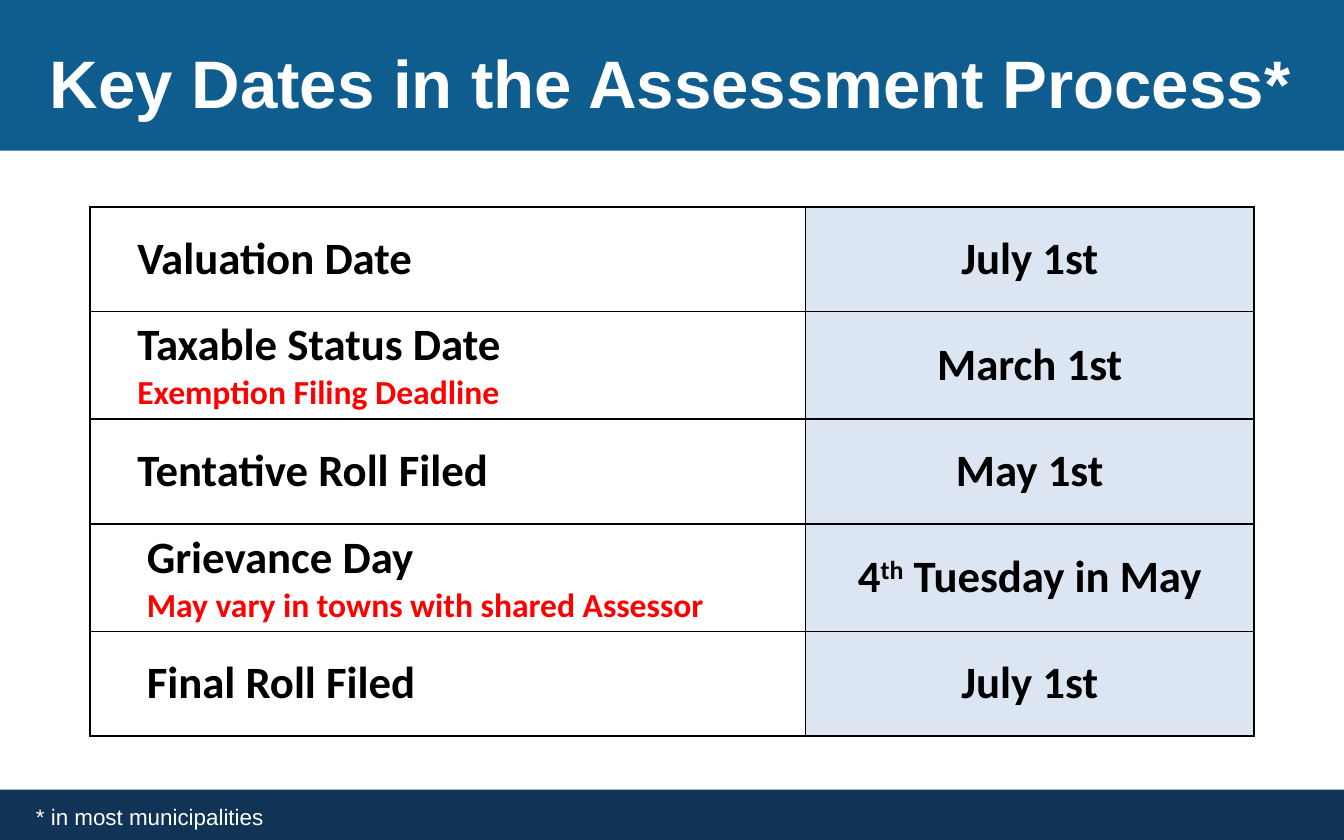
from lxml.etree import SubElement
from pptx import Presentation
from pptx.dml.color import RGBColor
from pptx.enum.shapes import MSO_SHAPE
from pptx.enum.text import MSO_ANCHOR, PP_ALIGN
from pptx.oxml.ns import qn
from pptx.util import Cm, Pt

WHITE = RGBColor(0xFF, 0xFF, 0xFF)
BLACK = RGBColor(0x00, 0x00, 0x00)
RED = RGBColor(0xFF, 0x00, 0x00)
HEADER_BLUE = RGBColor(0x0F, 0x5D, 0x8E)
FOOTER_BLUE = RGBColor(0x11, 0x33, 0x56)
DATE_FILL = RGBColor(0xDC, 0xE6, 0xF2)

# Content
TITLE = "Key Dates in the Assessment Process*"
FOOTNOTE = "* in most municipalities"
# Event, note below it, left indent in cm, date as (text, superscript) runs
KEY_DATES = [
    ("Valuation Date", None, 0.64, [("July 1st", False)]),
    ("Taxable Status Date", "Exemption Filing Deadline", 0.64, [("March 1st", False)]),
    ("Tentative Roll Filed", None, 0.64, [("May 1st", False)]),
    ("Grievance Day", "May vary in towns with shared Assessor", 0.82,
     [("4", False), ("th", True), (" Tuesday in May", False)]),
    ("Final Roll Filed", None, 0.82, [("July 1st", False)]),
]

# Layout in cm
SLIDE_WIDTH, SLIDE_HEIGHT = 25.4, 15.88
HEADER_HEIGHT, FOOTER_HEIGHT = 2.85, 0.95
TABLE_LEFT, TABLE_TOP = 1.7, 3.91
COLUMN_WIDTHS = (13.52, 8.48)
ROW_HEIGHT = 1.98


def add_band(slide, top, height, color):
    band = slide.shapes.add_shape(
        MSO_SHAPE.RECTANGLE, Cm(0), Cm(top), Cm(SLIDE_WIDTH), Cm(height))
    band.shadow.inherit = False
    band.fill.solid()
    band.fill.fore_color.rgb = color
    band.line.fill.background()


def add_run(paragraph, text, size, color, font="Calibri", bold=True, superscript=False):
    run = paragraph.add_run()
    run.text = text
    run.font.name = font
    run.font.size = Pt(size)
    run.font.bold = bold
    run.font.color.rgb = color
    if superscript:
        run.font._element.set("baseline", "30000")


def add_text(slide, box, text, size, bold, anchor):
    frame = slide.shapes.add_textbox(*(Cm(length) for length in box)).text_frame
    frame.word_wrap = True
    frame.vertical_anchor = anchor
    add_run(frame.paragraphs[0], text, size, WHITE, "Arial", bold)


def style_cell(cell, color):
    cell.vertical_anchor = MSO_ANCHOR.MIDDLE
    properties = cell._tc.get_or_add_tcPr()
    for side in ("a:lnL", "a:lnR", "a:lnT", "a:lnB"):
        border = SubElement(properties, qn(side), w=str(Pt(1)))
        fill = SubElement(border, qn("a:solidFill"))
        SubElement(fill, qn("a:srgbClr"), val=str(BLACK))
    cell.fill.solid()
    cell.fill.fore_color.rgb = color


def fill_event(cell, event, note, indent):
    style_cell(cell, WHITE)
    frame = cell.text_frame
    add_run(frame.paragraphs[0], event, 24, BLACK)
    if note:
        add_run(frame.add_paragraph(), note, 18, RED)
    for paragraph in frame.paragraphs:
        paragraph.level = 1
        properties = paragraph._p.get_or_add_pPr()
        properties.set("marL", str(Cm(indent)))
        properties.set("indent", "0")


def fill_date(cell, runs):
    style_cell(cell, DATE_FILL)
    paragraph = cell.text_frame.paragraphs[0]
    paragraph.alignment = PP_ALIGN.CENTER
    for text, superscript in runs:
        add_run(paragraph, text, 24, BLACK, superscript=superscript)


def add_dates_table(slide):
    table = slide.shapes.add_table(
        len(KEY_DATES), len(COLUMN_WIDTHS), Cm(TABLE_LEFT), Cm(TABLE_TOP),
        Cm(sum(COLUMN_WIDTHS)), Cm(ROW_HEIGHT * len(KEY_DATES))).table
    table.first_row = False
    table.horz_banding = False
    for column, width in zip(table.columns, COLUMN_WIDTHS):
        column.width = Cm(width)
    for row, (event, note, indent, date_runs) in zip(table.rows, KEY_DATES):
        row.height = Cm(ROW_HEIGHT)
        fill_event(row.cells[0], event, note, indent)
        fill_date(row.cells[1], date_runs)


def main():
    presentation = Presentation()
    presentation.slide_width = Cm(SLIDE_WIDTH)
    presentation.slide_height = Cm(SLIDE_HEIGHT)
    slide = presentation.slides.add_slide(presentation.slide_layouts[6])

    # Header and footer bands
    add_band(slide, 0, HEADER_HEIGHT, HEADER_BLUE)
    add_band(slide, SLIDE_HEIGHT - FOOTER_HEIGHT, FOOTER_HEIGHT, FOOTER_BLUE)

    # Title, table of dates and footnote
    add_text(slide, (0.69, 0.89, 24.71, 1.3), TITLE, 36, True, MSO_ANCHOR.MIDDLE)
    add_dates_table(slide)
    add_text(slide, (0.43, 15.06, 11.86, 0.76), FOOTNOTE, 12, False, MSO_ANCHOR.TOP)

    presentation.save("out.pptx")


if __name__ == "__main__":
    main()
